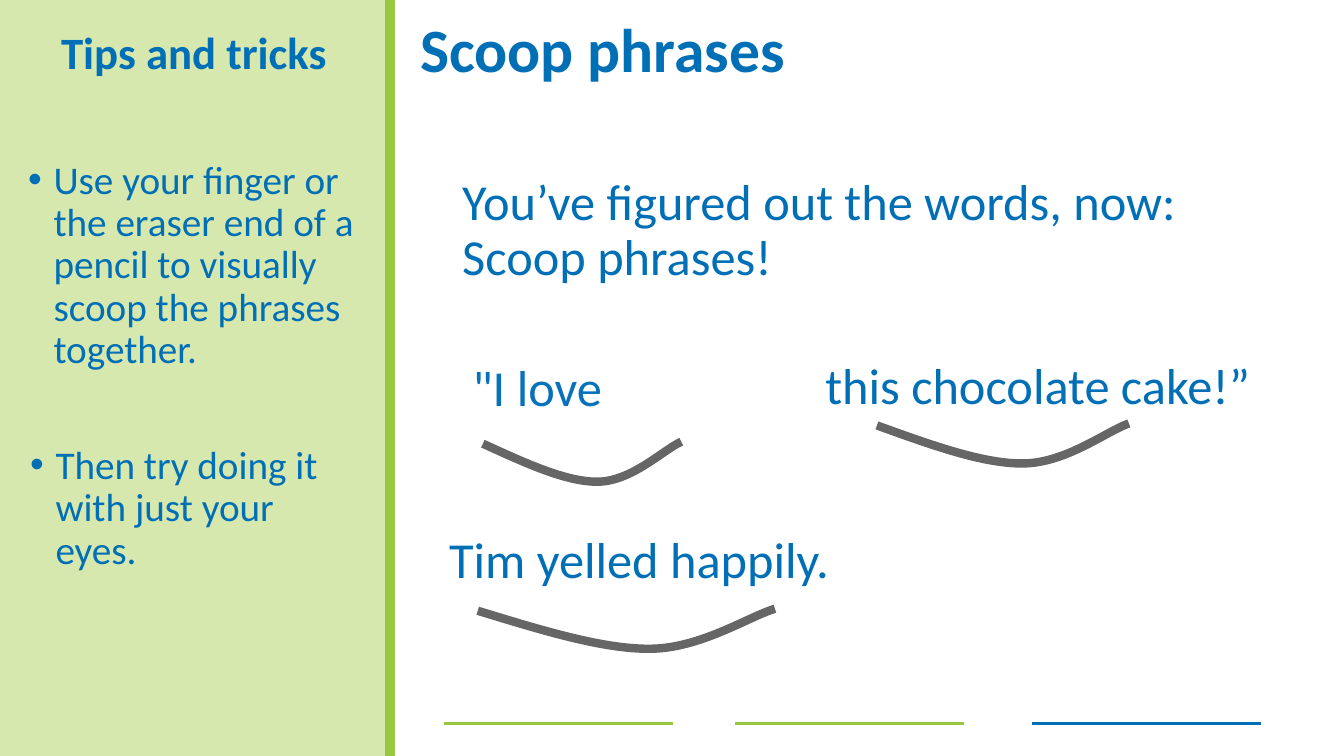
"""Build the reading-strategy slide "Scoop phrases"."""
from lxml import etree
from pptx import Presentation
from pptx.dml.color import RGBColor
from pptx.enum.shapes import MSO_CONNECTOR, MSO_SHAPE
from pptx.enum.text import MSO_ANCHOR, PP_ALIGN
from pptx.oxml.ns import qn
from pptx.util import Cm, Pt

STRAIGHT = MSO_CONNECTOR.STRAIGHT
RECTANGLE = MSO_SHAPE.RECTANGLE
TOP = MSO_ANCHOR.TOP
LEFT, CENTER = PP_ALIGN.LEFT, PP_ALIGN.CENTER

BLUE = RGBColor(0x00, 0x6F, 0xB6)
LIGHT_BLUE = RGBColor(0x07, 0x71, 0xBA)
GREEN = RGBColor(0x96, 0xC9, 0x3F)
PALE_GREEN = RGBColor(0xD7, 0xE8, 0xAF)
GRAY = RGBColor(0x66, 0x66, 0x66)
FONT = "Calibri"

SLIDE_WIDTH, SLIDE_HEIGHT = 33.87, 19.05
SIDEBAR_WIDTH = 9.83
FOOTER_TOP, FOOTER_WIDTH = 18.24, 5.77
FOOTER_LINES = [(11.2, GREEN), (18.52, GREEN), (26.01, BLUE)]

TITLE = ("Scoop phrases", (9.83, 0, 15.8, 4.37))
TIPS_HEADING = ("Tips and tricks", (0.46, 0.64, 8.86, 2.41))
TIPS = [
    ("Use your finger or the eraser end of a pencil to visually scoop "
     "the phrases together.", (0.46, 3.91, 8.81, 6.27)),
    ("Then try doing it with just your eyes.", (0.51, 11.1, 8.81, 6.27)),
]
PHRASES = [
    ("You’ve figured out the words, now: Scoop phrases!",
     (11.4, 4.34, 20.96, 2.49), BLUE, 0),
    ("Tim yelled happily.", (11.07, 13.36, 10.46, 2.49), BLUE, 0),
    ("this chocolate cake!”", (20.55, 8.97, 13.03, 2.49), BLUE, 0),
    ("\"I love", (11.02, 9.02, 9.53, 2.49), LIGHT_BLUE, 0.64),
]
SCOOPS = [(12.17, 11.13, 5), (22.1, 10.67, 6.35), (12.04, 15.34, 7.49)]
SCOOP_HEIGHT = 1.02
SCOOP_CURVE = [(0, 0.05), (0.21, 0.52), (0.42, 1), (0.58, 0.99),
               (0.75, 0.98), (0.91, 0.2), (1, 0)]


def add_line(slide, left, top, right, bottom, color, weight):
    line = slide.shapes.add_connector(
        STRAIGHT, Cm(left), Cm(top), Cm(right), Cm(bottom))
    line.line.color.rgb = color
    line.line.width = Pt(weight)
    etree.SubElement(line._element.spPr, qn("a:effectLst"))


def add_text(slide, text, place, size, color=BLUE, bold=False, align=LEFT,
             margin=0, bullet=False, inset_left=0.25, inset_top=0.13):
    box = slide.shapes.add_textbox(*map(Cm, place))
    frame = box.text_frame
    frame.word_wrap = True
    frame.vertical_anchor = TOP
    frame.margin_left, frame.margin_top = Cm(inset_left), Cm(inset_top)
    para = frame.paragraphs[0]
    properties = para._p.get_or_add_pPr()
    properties.set("marL", str(Cm(margin)))
    if bullet:
        properties.set("indent", str(-Cm(margin)))
        bullet_color = etree.SubElement(properties, qn("a:buClr"))
        etree.SubElement(bullet_color, qn("a:srgbClr"), val=str(color))
        etree.SubElement(properties, qn("a:buFont"), typeface="Arial")
        etree.SubElement(properties, qn("a:buChar"), char="•")
    para.alignment = align
    para.line_spacing = 0.9
    span = para.add_run()
    span.text = text
    span.font.name = FONT
    span.font.size = Pt(size)
    span.font.bold = bold
    span.font.color.rgb = color


def add_scoop(slide, left, top, width):
    points = [(Cm(left + x * width), Cm(top + y * SCOOP_HEIGHT))
              for x, y in SCOOP_CURVE]
    builder = slide.shapes.build_freeform(*points[0])
    builder.add_line_segments(points[1:], close=False)
    scoop = builder.convert_to_shape()
    scoop.shadow.inherit = False
    scoop.fill.background()
    scoop.line.color.rgb = GRAY
    scoop.line.width = Pt(6)
    segments = list(scoop._element.iter(qn("a:lnTo")))
    outline = segments[0].getparent()
    for start in range(0, len(segments), 3):
        curve = etree.SubElement(outline, qn("a:cubicBezTo"))
        for segment in segments[start:start + 3]:
            curve.append(segment[0])
            outline.remove(segment)


def main():
    deck = Presentation()
    deck.slide_width, deck.slide_height = Cm(SLIDE_WIDTH), Cm(SLIDE_HEIGHT)
    page = deck.slides.add_slide(deck.slide_layouts[6])

    sidebar = page.shapes.add_shape(
        RECTANGLE, 0, 0, Cm(SIDEBAR_WIDTH), Cm(SLIDE_HEIGHT))
    sidebar.shadow.inherit = False
    sidebar.fill.solid()
    sidebar.fill.fore_color.rgb = PALE_GREEN
    sidebar.line.fill.background()
    add_line(page, SIDEBAR_WIDTH, 0, SIDEBAR_WIDTH, SLIDE_HEIGHT, GREEN, 7)
    for left, color in FOOTER_LINES:
        add_line(page, left, FOOTER_TOP, left + FOOTER_WIDTH, FOOTER_TOP,
                 color, 2)

    add_text(page, *TITLE, 44, bold=True, inset_left=0.76, inset_top=0.48)
    add_text(page, *TIPS_HEADING, 32, bold=True, align=CENTER)
    for text, place in TIPS:
        add_text(page, text, place, 28, margin=0.64, bullet=True)
    for text, place, color, margin in PHRASES:
        add_text(page, text, place, 36, color, margin=margin)
    for scoop in SCOOPS:
        add_scoop(page, *scoop)

    deck.save("out.pptx")


if __name__ == "__main__":
    main()
